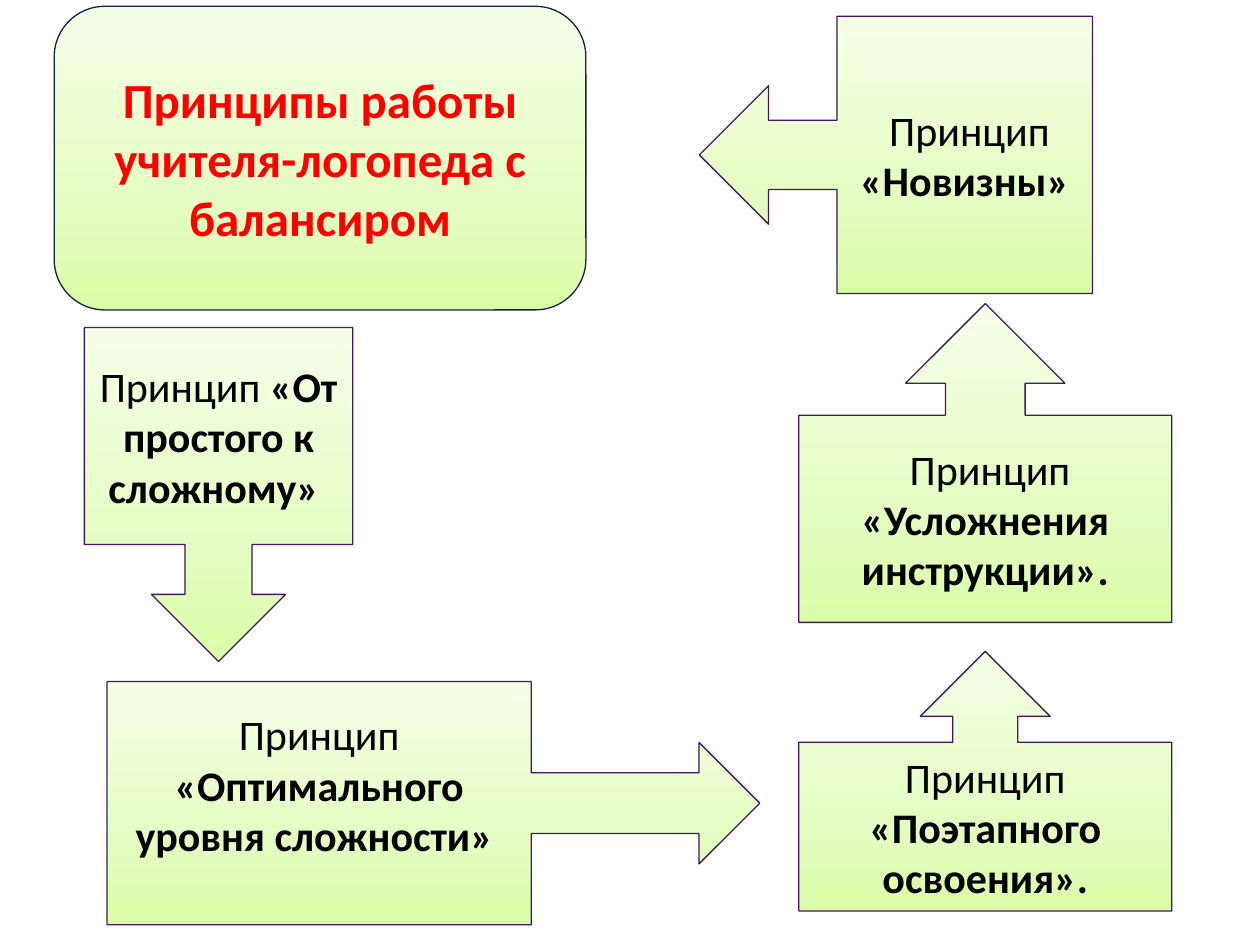
from pptx import Presentation
from pptx.dml.color import RGBColor
from pptx.enum.shapes import MSO_SHAPE
from pptx.enum.text import MSO_ANCHOR, PP_ALIGN
from pptx.oxml import parse_xml
from pptx.oxml.ns import nsdecls
from pptx.util import Inches, Pt

ROUND = MSO_SHAPE.ROUNDED_RECTANGLE
LEFT = MSO_SHAPE.LEFT_ARROW_CALLOUT
RIGHT = MSO_SHAPE.RIGHT_ARROW_CALLOUT
UP = MSO_SHAPE.UP_ARROW_CALLOUT
DOWN = MSO_SHAPE.DOWN_ARROW_CALLOUT
MIDDLE = MSO_ANCHOR.MIDDLE
CENTER = PP_ALIGN.CENTER

RED = RGBColor(0xFF, 0x00, 0x00)
BLACK = RGBColor(0x00, 0x00, 0x00)
NAVY = RGBColor(0x0F, 0x24, 0x3E)
PURPLE = RGBColor(0x40, 0x1A, 0x5D)
# Gradient stops, from the bottom of a shape to its top
GREENS = [
    (0, RGBColor(0xDA, 0xFD, 0xA7)),
    (35, RGBColor(0xE4, 0xFC, 0xC2)),
    (100, RGBColor(0xF5, 0xFF, 0xE7)),
]


class Board:
    """Holds the text style and the current slide."""

    font = "Calibri"

    def __init__(self, slide):
        self.slide = slide

    def shape(self, kind, place, edge):
        item = self.slide.shapes.add_shape(kind, *map(Inches, place))
        item.shadow.inherit = False
        item.line.color.rgb = edge
        item.line.width = Pt(0.75)
        self.shade(item)
        frame = item.text_frame
        frame.word_wrap = True
        frame.vertical_anchor = MIDDLE
        frame.paragraphs[0].alignment = CENTER
        return frame

    def shade(self, item):
        item.fill.gradient()
        item.fill.gradient_angle = 90
        # A new gradient has two stops; replace them with all three
        stops = item.element.spPr.find(".//{*}gsLst")
        for old in list(stops):
            stops.remove(old)
        for spot, color in GREENS:
            stops.append(parse_xml(
                f'<a:gs {nsdecls("a")} pos="{spot * 1000}">'
                f'<a:srgbClr val="{color}"/></a:gs>'))

    def label(self, frame, text, size, color, bold):
        run = frame.paragraphs[0].add_run()
        run.text = text
        font = run.font
        font.name, font.size, font.bold = self.font, Pt(size), bold
        font.color.rgb = color

    def heading(self, text, place):
        frame = self.shape(ROUND, place, NAVY)
        self.label(frame, text, 28, RED, True)

    def callout(self, kind, place, lead, name, foot=0.05):
        frame = self.shape(kind, place, PURPLE)
        frame.margin_bottom = Inches(foot)
        self.label(frame, lead, 24, BLACK, False)
        self.label(frame, name, 24, BLACK, True)


def main():
    deck = Presentation()
    deck.slide_width, deck.slide_height = Inches(10), Inches(7.5)
    board = Board(deck.slides.add_slide(deck.slide_layouts[6]))

    # Heading
    board.heading("Принципы работы учителя-логопеда с балансиром",
                  (0.43, 0.05, 4.22, 2.41))

    # Right column, from top to bottom
    board.callout(LEFT, (5.55, 0.13, 3.12, 2.2), " Принцип ", "«Новизны»")
    board.callout(UP, (6.34, 2.41, 2.96, 2.53),
                  " Принцип ", "«Усложнения инструкции».")
    board.callout(UP, (6.34, 5.17, 2.96, 2.06),
                  "Принцип ", "«Поэтапного освоения».")

    # Left column; the last text sits above the middle of its box
    board.callout(DOWN, (0.67, 2.6, 2.13, 2.65),
                  "Принцип ", "«От простого к сложному» ")
    board.callout(RIGHT, (0.85, 5.41, 5.18, 1.93),
                  "Принцип ", "«Оптимального уровня сложности» ", foot=0.35)

    deck.save("out.pptx")


if __name__ == "__main__":
    main()
